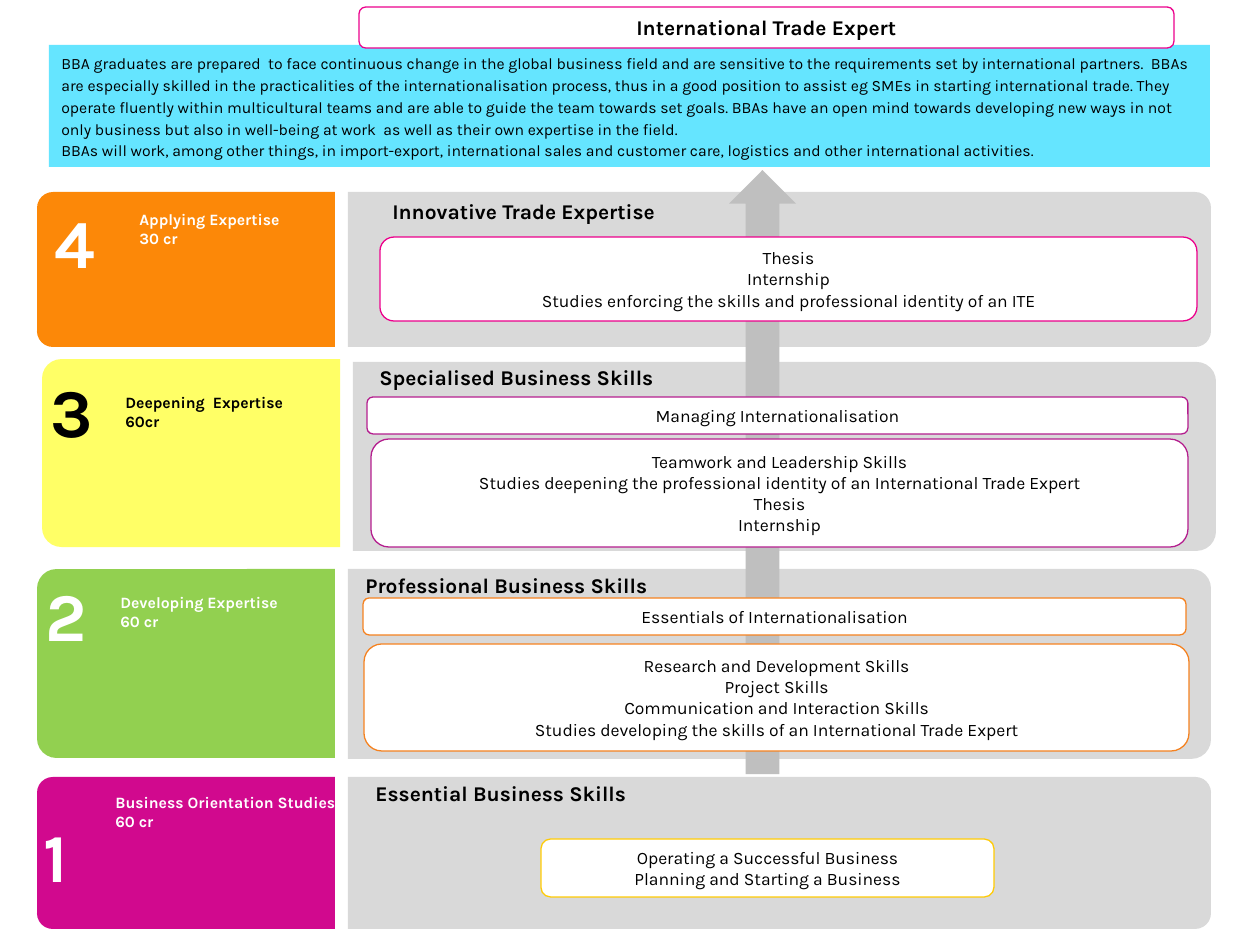
from pptx import Presentation
from pptx.dml.color import RGBColor
from pptx.enum.shapes import MSO_SHAPE
from pptx.enum.text import MSO_ANCHOR, MSO_AUTO_SIZE, PP_ALIGN
from pptx.util import Pt

EMU_PER_PX = 914400 / 126
FONT = "Karla"

BLACK = RGBColor(0x00, 0x00, 0x00)
WHITE = RGBColor(0xFF, 0xFF, 0xFF)
CYAN = RGBColor(0x65, 0xE5, 0xFF)
PANEL_GREY = RGBColor(0xD9, 0xD9, 0xD9)
ARROW_GREY = RGBColor(0xBF, 0xBF, 0xBF)
ORANGE = RGBColor(0xFC, 0x88, 0x08)
YELLOW = RGBColor(0xFF, 0xFF, 0x66)
GREEN = RGBColor(0x92, 0xD0, 0x50)
MAGENTA = RGBColor(0xD1, 0x09, 0x8E)
PINK_LINE = RGBColor(0xEC, 0x00, 0x8C)
PURPLE_LINE = RGBColor(0xB4, 0x1E, 0x8E)
ORANGE_LINE = RGBColor(0xF5, 0x82, 0x20)
GOLD_LINE = RGBColor(0xFF, 0xCB, 0x05)

BADGE_WIDTH, PANEL_WIDTH, PANEL_OFFSET = 298, 863, 311

INTRO = [
    "BBA graduates are prepared  to face continuous change in the global business field and are "
    "sensitive to the requirements set by international partners.  BBAs are especially skilled in "
    "the practicalities of the internationalisation process, thus in a good position to assist eg "
    "SMEs in starting international trade. They operate fluently within multicultural teams and "
    "are able to guide the team towards set goals. BBAs have an open mind towards developing new "
    "ways in not only business but also in well-being at work  as well as their own expertise in "
    "the field.",
    "BBAs will work, among other things, in import-export, international sales and customer care, "
    "logistics and other international activities.",
]

# badge (left, top, height), panel (top, height), fill, text colour,
# number and its place, label and its place, heading and its place
LEVELS = [
    ((37, 192, 155), (192, 155), ORANGE, WHITE, "4", (42, 194),
     ["Applying Expertise", "30 cr"], (127, 204), "Innovative Trade Expertise", (380, 192)),
    ((42, 359, 188), (362, 189), YELLOW, BLACK, "3", (38, 363),
     ["Deepening  Expertise", "60cr"], (113, 387), "Specialised Business Skills", (367, 358)),
    ((37, 569, 189), (569, 190), GREEN, WHITE, "2", (33, 567),
     ["Developing Expertise", "60 cr"], (108, 587), "Professional Business Skills", (353, 566)),
    ((37, 777, 152), (777, 152), MAGENTA, WHITE, "1", (31, 808),
     ["Business Orientation Studies", "60 cr"], (103, 787), "Essential Business Skills", (363, 774)),
]

CARDS = [
    ((380, 237, 817, 84), PINK_LINE,
     ["Thesis", "Internship",
      "Studies enforcing the skills and professional identity of an ITE"]),
    ((367, 397, 821, 37), PURPLE_LINE, ["Managing Internationalisation"]),
    ((371, 439, 817, 108), PURPLE_LINE,
     ["Teamwork and Leadership Skills",
      "Studies deepening the professional identity of an International Trade Expert",
      "Thesis", "Internship"]),
    ((363, 598, 823, 37), ORANGE_LINE, ["Essentials of Internationalisation"]),
    ((364, 644, 825, 107), ORANGE_LINE,
     ["Research and Development Skills", "Project Skills",
      "Communication and Interaction Skills",
      "Studies developing the skills of an International Trade Expert"]),
    ((541, 839, 453, 58), GOLD_LINE,
     ["Operating a Successful Business", "Planning and Starting a Business"]),
]


def px(length):
    return round(length * EMU_PER_PX)


def write(frame, lines, size, color, bold=False, align=PP_ALIGN.LEFT, spacing=None):
    frame.word_wrap = True
    for index, line in enumerate(lines):
        paragraph = frame.add_paragraph() if index else frame.paragraphs[0]
        paragraph.text = line
        paragraph.alignment = align
        paragraph.line_spacing = spacing
        font = paragraph.font
        font.name, font.size, font.bold = FONT, Pt(size), bold
        font.color.rgb = color


def add_block(slide, kind, box, fill, line=None):
    block = slide.shapes.add_shape(kind, *map(px, box))
    block.shadow.inherit = False
    block.fill.solid()
    block.fill.fore_color.rgb = fill
    if line is None:
        block.line.fill.background()
    else:
        block.line.color.rgb = line
        block.line.width = Pt(0.75)
    return block


def add_turned(slide, kind, box, fill, rotation):
    """Add a shape turned by a quarter so that it covers box once turned."""
    left, top, width, height = box
    shift = (width - height) / 2
    block = add_block(slide, kind, (left + shift, top - shift, height, width), fill)
    block.rotation = rotation
    return block


def add_half_rounded(slide, box, fill, rotation):
    block = add_turned(slide, MSO_SHAPE.ROUND_2_SAME_RECTANGLE, box, fill, rotation)
    block.adjustments[0] = 0.103
    block.adjustments[1] = 0


def add_text(slide, box, lines, size, color):
    frame = slide.shapes.add_textbox(*map(px, box)).text_frame
    write(frame, lines, size, color, bold=True)
    return frame


def add_card(slide, box, line, lines, size=10, bold=False):
    card = add_block(slide, MSO_SHAPE.ROUNDED_RECTANGLE, box, WHITE, line)
    card.text_frame.vertical_anchor = MSO_ANCHOR.MIDDLE
    write(card.text_frame, lines, size, BLACK, bold, PP_ALIGN.CENTER)


def add_level(slide, badge, panel, fill, color, number, number_at,
              label, label_at, heading, heading_at):
    left, top, height = badge
    panel_top, panel_height = panel
    add_half_rounded(slide, (left, top, BADGE_WIDTH, height), fill, 270)
    add_half_rounded(
        slide, (left + PANEL_OFFSET, panel_top, PANEL_WIDTH, panel_height), PANEL_GREY, 90)
    add_text(slide, (*label_at, 252, 51), label, 9, color)
    number_frame = add_text(slide, (*number_at, 69, 94), [number], 39, color)
    number_frame.word_wrap = False
    number_frame.auto_size = MSO_AUTO_SIZE.SHAPE_TO_FIT_TEXT
    add_text(slide, (*heading_at, 530, 38), [heading], 12, BLACK)


def add_intro(slide):
    intro = add_block(slide, MSO_SHAPE.RECTANGLE, (49, 45, 1161, 122), CYAN)
    intro.text_frame.vertical_anchor = MSO_ANCHOR.TOP
    write(intro.text_frame, INTRO, 9, BLACK, spacing=1.15)


def main():
    presentation = Presentation()
    presentation.slide_width, presentation.slide_height = px(1260), px(945)
    slide = presentation.slides.add_slide(presentation.slide_layouts[6])

    add_intro(slide)
    add_card(slide, (359, 7, 815, 41), PINK_LINE, ["International Trade Expert"], 12, True)
    for level in LEVELS:
        add_level(slide, *level)
    add_turned(slide, MSO_SHAPE.RIGHT_ARROW, (729, 170, 67, 604), ARROW_GREY, 270)
    for card in CARDS:
        add_card(slide, *card)

    presentation.save("out.pptx")


if __name__ == "__main__":
    main()
